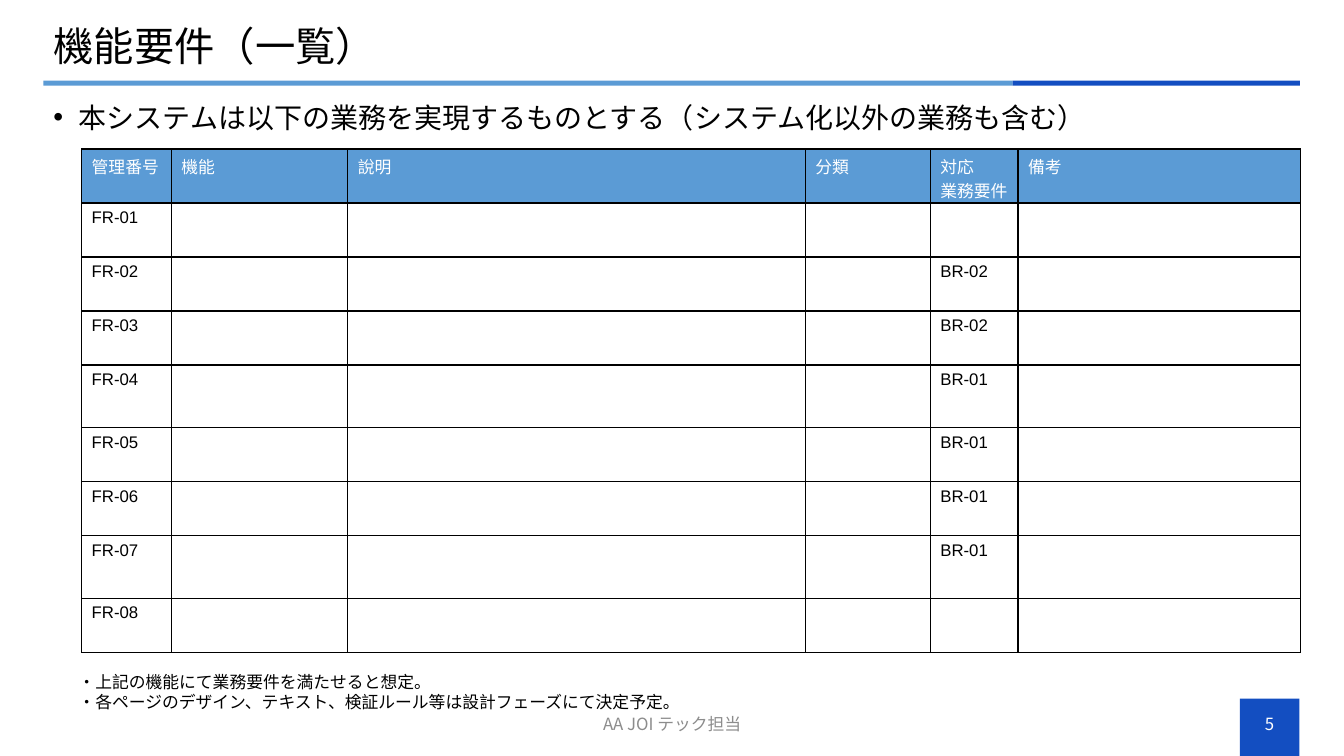
"""Build the functional requirements list slide."""
from dataclasses import dataclass
from itertools import product
from typing import NamedTuple

from lxml.etree import SubElement
from pptx import Presentation
from pptx.dml.color import RGBColor
from pptx.enum.shapes import MSO_SHAPE
from pptx.enum.text import MSO_ANCHOR, MSO_AUTO_SIZE, PP_ALIGN
from pptx.oxml.ns import qn
from pptx.util import Pt


@dataclass(frozen=True)
class Theme:
    sans: str = "Noto Sans CJK JP"
    latin: str = "Arial"
    black: str = "000000"
    white: str = "FFFFFF"
    grey: str = "8C8C8C"
    blue: str = "5B9BD5"
    navy: str = "134EC1"
    title: float = 28.8
    body: float = 20
    small: float = 12


class Box(NamedTuple):
    left: float
    top: float
    width: float
    height: float


class Bar(NamedTuple):
    box: Box
    color: str


class Label(NamedTuple):
    box: Box
    text: str
    color: str
    centered: bool


class Requirement(NamedTuple):
    number: str
    business: str
    height: float


T = Theme()
ROW, TALL_ROW = 38.6, 44.8
PAGE_BOX = Box(885.6, 502.6, 42.5, 28.8)

BARS = [
    Bar(Box(885.6, 499, 42.5, 41), T.navy),
    Bar(Box(31, 57.6, 692.3, 3.6), T.blue),
    Bar(Box(723.3, 57.6, 205.2, 3.6), T.navy),
]
LABELS = [
    Label(PAGE_BOX, "5", T.white, True),
    Label(Box(49, 476, 450.7, 36),
          "・上記の機能にて業務要件を満たせると想定。\n"
          "・各ページのデザイン、テキスト、検証ルール等は設計フェーズにて決定予定。",
          T.black, False),
    Label(Box(318.2, 502.6, 324, 28.8), "AA JOI テック担当", T.grey, True),
]
HEADERS = ["管理番号", "機能", "說明", "分類", "対応\n業務要件", "備考"]
COL_WIDTHS = [64.1, 126, 326.8, 89.3, 62.7, 201.6]
BUSINESS = ["", "BR-02", "BR-02", "BR-01", "BR-01", "BR-01", "BR-01", ""]
REQUIREMENTS = [
    Requirement(f"FR-{i:02}", br, TALL_ROW if i in (4, 7) else ROW)
    for i, br in enumerate(BUSINESS, 1)
]


def pts(box: Box) -> list:
    return [Pt(v) for v in box]


def style(tf, size: float, color: str, font: str = T.sans) -> None:
    for p in tf.paragraphs:
        for r in p.runs:
            r.font.size = Pt(size)
            r.font.name = font
            r.font.color.rgb = RGBColor.from_string(color)
            SubElement(r.font._element, qn("a:ea"), typeface=T.sans)


def fill_placeholder(sp, box: Box, text: str, size: float, spacing: float):
    sp.left, sp.top, sp.width, sp.height = pts(box)
    tf = sp.text_frame
    tf.text = text
    tf.auto_size = MSO_AUTO_SIZE.NONE
    p = tf.paragraphs[0]
    p.line_spacing = spacing
    p.space_before = Pt(0)
    p.alignment = PP_ALIGN.LEFT
    style(tf, size, T.black)
    return tf


def add_bar(slide, bar: Bar) -> None:
    sp = slide.shapes.add_shape(MSO_SHAPE.RECTANGLE, *pts(bar.box))
    sp.shadow.inherit = False
    sp.fill.solid()
    sp.fill.fore_color.rgb = RGBColor.from_string(bar.color)
    sp.line.fill.background()


def add_label(slide, label: Label) -> None:
    tf = slide.shapes.add_textbox(*pts(label.box)).text_frame
    tf.text = label.text
    tf.word_wrap = label.centered
    if label.centered:
        tf.vertical_anchor = MSO_ANCHOR.MIDDLE
        tf.paragraphs[0].alignment = PP_ALIGN.CENTER
    else:
        tf.auto_size = MSO_AUTO_SIZE.SHAPE_TO_FIT_TEXT
    style(tf, T.small, label.color)


def add_borders(cell) -> None:
    tcPr = cell._tc.get_or_add_tcPr()
    for side in "LRTB":
        ln = SubElement(tcPr, qn(f"a:ln{side}"), w=str(Pt(1)))
        fill = SubElement(ln, qn("a:solidFill"))
        SubElement(fill, qn("a:srgbClr"), val=T.black)


def add_requirements(slide, box: Box) -> None:
    rows = [HEADERS] + [[q.number, "", "", "", q.business, ""] for q in REQUIREMENTS]
    heights = [ROW] + [q.height for q in REQUIREMENTS]
    tbl = slide.shapes.add_table(len(rows), len(HEADERS), *pts(box)).table
    tbl.first_row = tbl.horz_banding = False
    for col, width in zip(tbl.columns, COL_WIDTHS):
        col.width = Pt(width)
    for row, height in zip(tbl.rows, heights):
        row.height = Pt(height)
    for i, j in product(range(len(rows)), range(len(HEADERS))):
        cell = tbl.cell(i, j)
        cell.text = rows[i][j]
        add_borders(cell)
        if i == 0:
            cell.margin_bottom = Pt(0)
            cell.fill.solid()
            cell.fill.fore_color.rgb = RGBColor.from_string(T.blue)
        else:
            cell.fill.background()
        style(cell.text_frame, T.small, T.black if i else T.white, T.latin)


def main() -> None:
    prs = Presentation()
    prs.slide_width, prs.slide_height = Pt(960), Pt(540)
    slide = prs.slides.add_slide(prs.slide_layouts[1])

    title = fill_placeholder(slide.shapes.title, Box(31, 15.1, 897.1, 39.6),
                             "機能要件（一覧）", T.title, 0.9)
    title.vertical_anchor = MSO_ANCHOR.MIDDLE
    body = fill_placeholder(slide.placeholders[1], Box(31, 63.4, 897.1, 39.6),
                            "本システムは以下の業務を実現するものとする（システム化以外の業務も含む）",
                            T.body, 1.2)
    pPr = body.paragraphs[0]._p.get_or_add_pPr()
    pPr.set("marL", str(Pt(18)))
    pPr.set("indent", str(-Pt(18)))
    SubElement(pPr, qn("a:buFont"), typeface=T.latin)
    SubElement(pPr, qn("a:buChar"), char="•")

    for bar in BARS:
        add_bar(slide, bar)
    for label in LABELS:
        add_label(slide, label)
    add_requirements(slide, Box(58.3, 106.4, 870.5, 359.8))
    prs.save("out.pptx")


if __name__ == "__main__":
    main()
